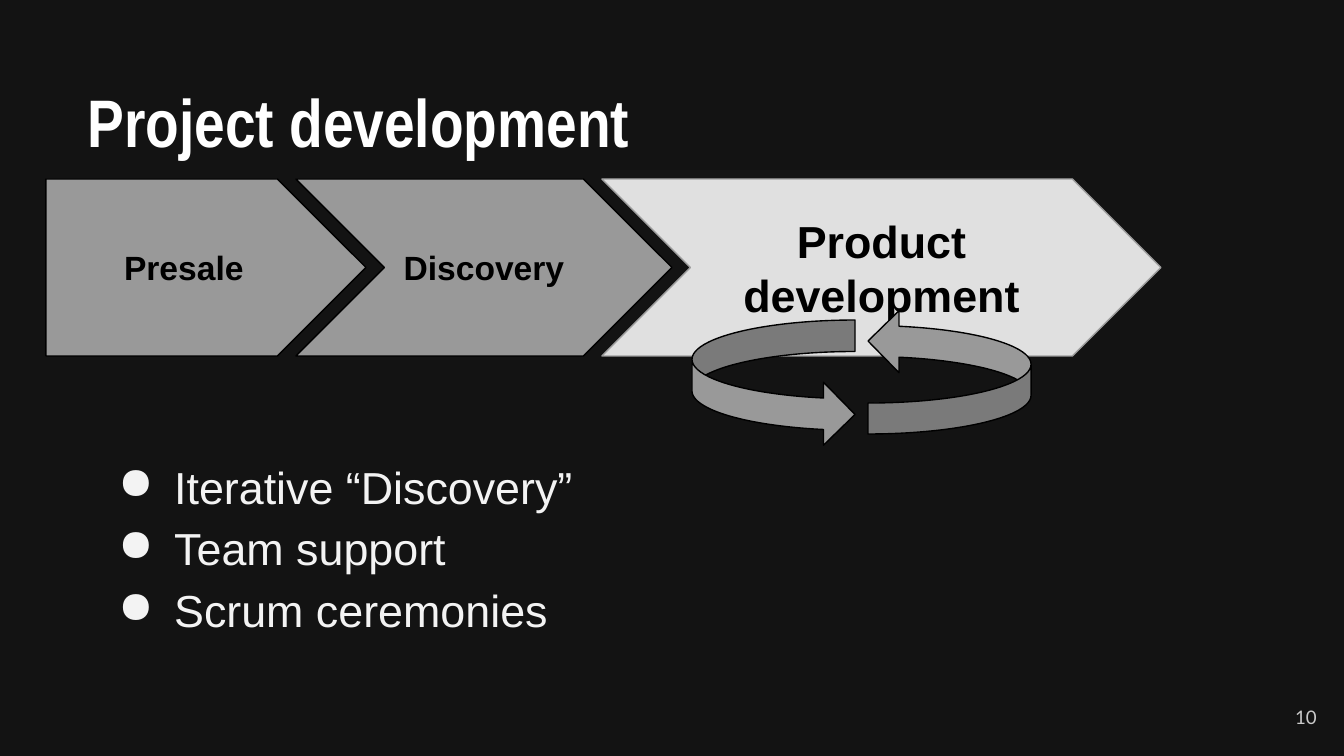
"""Build the project development slide with its phase arrows and iteration loop."""
import dataclasses

import lxml.etree
import pptx
import pptx.dml.color
import pptx.enum.shapes
import pptx.enum.text
import pptx.oxml.ns
import pptx.util

KIND = pptx.enum.shapes.MSO_SHAPE
ALIGN = pptx.enum.text.PP_ALIGN
SCALE = 914400 / 134.4


def px(size):
    """Turn pixels into EMU."""
    return pptx.util.Emu(round(size * SCALE))


def rgb(code):
    """Turn a hex code into a colour."""
    return pptx.dml.color.RGBColor.from_string(code)


@dataclasses.dataclass(frozen=True)
class Theme:
    """Hold the colours, fonts and type sizes."""
    back: str = "131313"
    ink: str = "000000"
    white: str = "FFFFFF"
    pale: str = "F3F3F3"
    faint: str = "CACACA"
    gray: str = "999999"
    light: str = "E0E0E0"
    edge: str = "9E9E9E"
    head: str = "Arial Narrow"
    body: str = "Arial"
    num: str = "Lato"
    big: int = 36
    mid: int = 24
    small: int = 18
    tiny: int = 10


class Deck:
    """Hold the style and the current slide."""

    def __init__(self, theme):
        """Open a deck with one dark title-only slide."""
        self.theme = theme
        self.file = pptx.Presentation()
        self.file.slide_width, self.file.slide_height = px(1344), px(756)
        self.slide = self.file.slides.add_slide(self.file.slide_layouts[5])
        fill = self.slide.background.fill
        fill.solid()
        fill.fore_color.rgb = rgb(theme.back)

    def label(self, shape, lines, size, color, font=None, bold=False,
              align=ALIGN.LEFT, dots=False):
        """Fill a shape with styled paragraphs."""
        frame = shape.text_frame
        frame.text = "\n".join(lines)
        frame.word_wrap = True
        frame.auto_size = pptx.enum.text.MSO_AUTO_SIZE.NONE
        frame.vertical_anchor = pptx.enum.text.MSO_ANCHOR.MIDDLE
        inset = pptx.util.Inches(0.1)
        frame.margin_left = frame.margin_right = inset
        frame.margin_top = frame.margin_bottom = inset
        for para in frame.paragraphs:
            para.alignment = align
            if dots:
                para.line_spacing = 1.15
                self.dot(para, color)
            para.font.name = font or self.theme.body
            para.font.size = pptx.util.Pt(size)
            para.font.bold = bold
            para.font.color.rgb = rgb(color)

    def dot(self, para, color):
        """Give a paragraph a round bullet and hanging indent."""
        props = para._p.get_or_add_pPr()
        props.set("marL", str(px(67)))
        props.set("indent", str(px(-56)))
        tag = pptx.oxml.ns.qn
        tint = lxml.etree.SubElement(props, tag("a:buClr"))
        lxml.etree.SubElement(tint, tag("a:srgbClr"), val=color)
        lxml.etree.SubElement(props, tag("a:buChar"), char="●")

    def title(self, box, text):
        """Place and format the slide title."""
        shape = self.slide.shapes.title
        shape.left, shape.top, shape.width, shape.height = map(px, box)
        self.label(shape, [text], self.theme.big, self.theme.white,
                   self.theme.head, bold=True)

    def text(self, box, lines, size, color, **style):
        """Add a text box."""
        shape = self.slide.shapes.add_textbox(*map(px, box))
        self.label(shape, lines, size, color, **style)

    def shape(self, kind, box, fill, line):
        """Add a filled and outlined preset shape."""
        shape = self.slide.shapes.add_shape(kind, *map(px, box))
        shape.shadow.inherit = False
        shape.fill.solid()
        shape.fill.fore_color.rgb = rgb(fill)
        shape.line.color.rgb = rgb(line)
        shape.line.width = pptx.util.Pt(0.75)
        return shape

    def phase(self, kind, box, text, size, fill, line):
        """Add a labelled phase arrow."""
        shape = self.shape(kind, box, fill, line)
        self.label(shape, [text], size, self.theme.ink, bold=True,
                   align=ALIGN.CENTER)

    def curve(self, kind, box, turn=False):
        """Add a curved arrow, turned upside down on request."""
        shape = self.shape(kind, box, self.theme.gray, self.theme.ink)
        for spot, value in enumerate((0.25, 0.5, 0.25)):
            shape.adjustments[spot] = value
        if turn:
            shape.rotation = 180
            shape._element.spPr.xfrm.set("flipH", "1")


def main():
    """Draw the slide and save it."""
    theme = Theme()
    deck = Deck(theme)
    deck.title((74, 58, 1154, 126), "Project development")
    left, lap = 46, 70
    for kind, wide, name, size, fill, line in (
        (KIND.PENTAGON, 320, "Presale", theme.small, theme.gray, theme.ink),
        (KIND.CHEVRON, 376, "Discovery", theme.small, theme.gray, theme.ink),
        (KIND.CHEVRON, 559, "Product development", theme.mid, theme.light,
         theme.edge),
    ):
        deck.phase(kind, (left, 179, wide, 177), name, size, fill, line)
        left += wide - lap
    deck.curve(KIND.CURVED_RIGHT_ARROW, (692, 320, 163, 126))
    deck.curve(KIND.CURVED_LEFT_ARROW, (868, 310, 163, 124), turn=True)
    deck.text((94, 419, 1023, 250),
              ["Iterative “Discovery”", "Team support", "Scrum ceremonies"],
              theme.mid, theme.pale, dots=True)
    deck.text((1249, 688, 81, 58), ["10"], theme.tiny, theme.faint,
              font=theme.num, align=ALIGN.RIGHT)
    deck.file.save("out.pptx")


if __name__ == "__main__":
    main()
